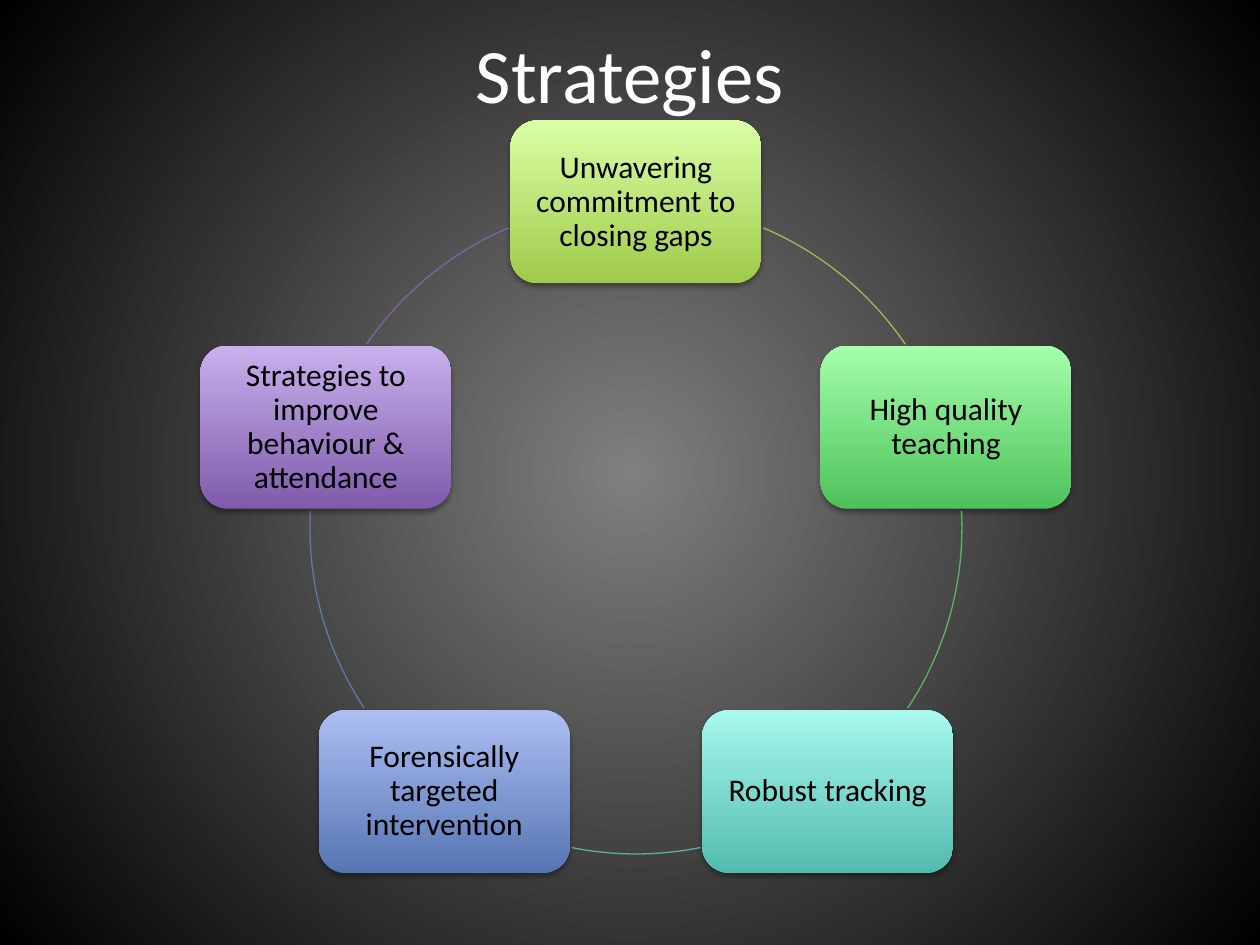
from dataclasses import dataclass
from math import cos, radians, sin

from lxml.etree import SubElement
from pptx import Presentation
from pptx.dml.color import RGBColor
from pptx.enum.shapes import MSO_SHAPE
from pptx.enum.text import MSO_ANCHOR, PP_ALIGN
from pptx.oxml.ns import qn
from pptx.slide import Slide
from pptx.text.text import TextFrame
from pptx.util import Emu, Pt


@dataclass(frozen=True)
class Theme:
    font: str = "Calibri"
    head: int = 44
    body: int = 18
    line: float = 0.75
    light: str = "FFFFFF"
    dark: str = "000000"
    glow: str = "7F7F7F"


@dataclass(frozen=True)
class Step:
    text: str
    low: str
    high: str
    ring: str
    start: float
    end: float


THEME = Theme()
WIDE, TALL = 1260, 945
MID_X, MID_Y, RADIUS = 636, 528, 326
BOX_W, BOX_H = 251, 163

STEPS = [
    Step("Unwavering commitment to closing gaps",
         "A0CA4A", "DAFFA5", "9BBB59", 293, 325.7),
    Step("High quality teaching",
         "4EC25B", "A4FEAB", "5CB565", 357, 33.5),
    Step("Robust tracking",
         "52BBAF", "A8F8ED", "5EAFA6", 78.6, 101.4),
    Step("Forensically targeted intervention",
         "5675B3", "ACBFF3", "6179A8", 146.5, 183),
    Step("Strategies to improve behaviour & attendance",
         "7F5BAB", "C8B0ED", "8064A2", 214.3, 247),
]


def px(count: float) -> Emu:
    return Emu(round(count * 914400 / 126))


def blend(fill, first: str, last: str) -> None:
    fill.gradient()
    for stop, color in zip(fill.gradient_stops, (first, last)):
        stop.color.rgb = RGBColor.from_string(color)


def paint_back(slide: Slide) -> None:
    fill = slide.background.fill
    blend(fill, THEME.glow, THEME.dark)
    grad = next(slide.element.iter(qn("a:gradFill")))
    grad.remove(grad.find(qn("a:lin")))
    path = SubElement(grad, qn("a:path"), {"path": "circle"})
    SubElement(path, qn("a:fillToRect"),
               {side: "50000" for side in ("l", "t", "r", "b")})


def write(frame: TextFrame, text: str, size: int, color: str) -> None:
    frame.word_wrap = True
    frame.vertical_anchor = MSO_ANCHOR.MIDDLE
    para = frame.paragraphs[0]
    para.text = text
    para.alignment = PP_ALIGN.CENTER
    para.font.name = THEME.font
    para.font.size = Pt(size)
    para.font.color.rgb = RGBColor.from_string(color)


def add_title(slide: Slide, text: str) -> None:
    frame = slide.shapes.add_textbox(px(63), px(13), px(1134), px(158)).text_frame
    write(frame, text, THEME.head, THEME.light)
    frame.margin_bottom = px(44)


def add_shade(shape) -> None:
    shape.shadow.inherit = False
    effects = shape.element.spPr.find(qn("a:effectLst"))
    shade = SubElement(effects, qn("a:outerShdw"), {
        "blurRad": str(Pt(3.1)), "dist": str(Pt(1.8)),
        "dir": "5400000", "rotWithShape": "0"})
    color = SubElement(shade, qn("a:srgbClr"), {"val": THEME.dark})
    SubElement(color, qn("a:alpha"), {"val": "35000"})


def add_box(slide: Slide, step: Step, turn: float) -> None:
    left = MID_X + RADIUS * sin(turn) - BOX_W / 2
    top = MID_Y - RADIUS * cos(turn) - BOX_H / 2
    box = slide.shapes.add_shape(MSO_SHAPE.ROUNDED_RECTANGLE,
                                 px(left), px(top), px(BOX_W), px(BOX_H))
    blend(box.fill, step.low, step.high)
    box.fill.gradient_angle = 90
    box.line.fill.background()
    add_shade(box)
    frame = box.text_frame
    write(frame, step.text, THEME.body, THEME.dark)
    frame.paragraphs[0].line_spacing = 0.9
    frame.margin_left = frame.margin_right = px(17)
    frame.margin_top = frame.margin_bottom = px(17)


def add_arc(slide: Slide, step: Step) -> None:
    arc = slide.shapes.add_shape(MSO_SHAPE.ARC,
                                 px(MID_X - RADIUS), px(MID_Y - RADIUS),
                                 px(2 * RADIUS), px(2 * RADIUS))
    for index, angle in enumerate((step.start, step.end)):
        arc.adjustments[index] = angle * 0.6
    arc.fill.background()
    arc.line.color.rgb = RGBColor.from_string(step.ring)
    arc.line.width = Pt(THEME.line)
    arc.shadow.inherit = False


def main() -> None:
    deck = Presentation()
    deck.slide_width, deck.slide_height = px(WIDE), px(TALL)
    slide = deck.slides.add_slide(deck.slide_layouts[6])
    paint_back(slide)
    add_title(slide, "Strategies")
    for index, step in enumerate(STEPS):
        add_box(slide, step, radians(index * 360 / len(STEPS)))
        add_arc(slide, step)
    deck.save("out.pptx")


if __name__ == "__main__":
    main()
